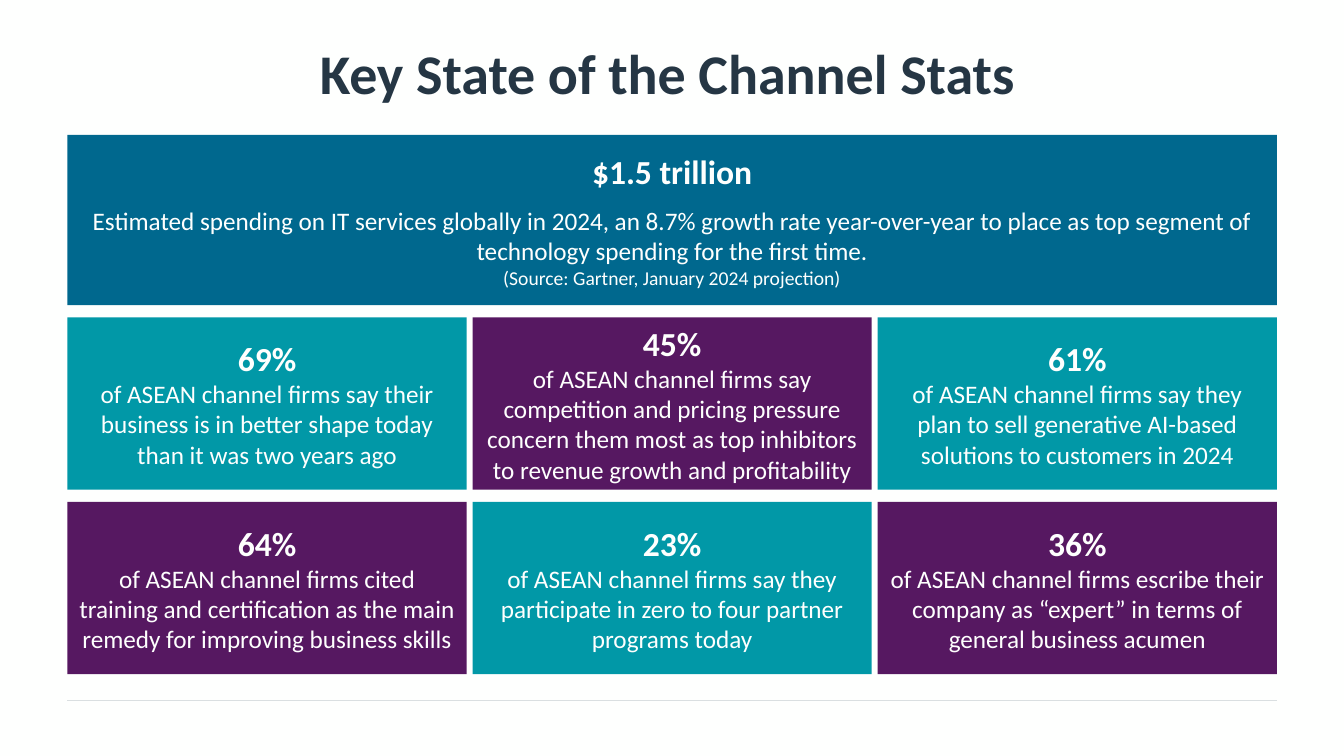
from pptx import Presentation
from pptx import util as u
from pptx.dml.color import RGBColor
from pptx.enum import shapes, text
from pptx.oxml.ns import qn
from lxml import etree

HUES = {"paper": "FEFFFE", "ink": "253644", "rule": "DADFE1",
        "blue": "00688E", "teal": "0198A7", "plum": "561861"}
LEFT, WIDE = 1.7, 30.48
COLS, GAP = 3, 0.15
TOP, HIGH, STEP = 8.0, 4.34, 4.65

STATS = [
    ("69%", "of ASEAN channel firms say their business is in better shape "
            "today than it was two years ago"),
    ("45%", "of ASEAN channel firms say competition and pricing pressure "
            "concern them most as top inhibitors to revenue growth and profitability"),
    ("61%", "of ASEAN channel firms say they plan to sell generative AI-based "
            "solutions to customers in 2024"),
    ("64%", "of ASEAN channel firms cited training and certification as the "
            "main remedy for improving business skills"),
    ("23%", "of ASEAN channel firms say they participate in zero to four "
            "partner programs today"),
    ("36%", "of ASEAN channel firms escribe their company as “expert” in terms "
            "of general business acumen"),
]


def hue(name):
    return RGBColor.from_string(HUES[name])


def write(para, words, size=18, bold=False, color="paper", after=0):
    para.alignment = text.PP_ALIGN.CENTER
    para.space_before, para.space_after = u.Pt(0), u.Pt(after)
    run = para.add_run()
    run.text = words
    font = run.font
    font.name, font.size, font.bold = "Calibri", u.Pt(size), bold
    font.color.rgb = hue(color)


class Board:
    def __init__(self, deck):
        self.slide = deck.slides.add_slide(deck.slide_layouts[5])
        fill = self.slide.background.fill
        fill.solid()
        fill.fore_color.rgb = hue("paper")

    def title(self, words, x, y, w, h):
        box = self.slide.shapes.title
        box.left, box.top, box.width, box.height = map(u.Cm, (x, y, w, h))
        frame = box.text_frame
        frame.auto_size = text.MSO_AUTO_SIZE.NONE
        frame.vertical_anchor = text.MSO_ANCHOR.MIDDLE
        frame.margin_left = 0
        write(frame.paragraphs[0], words, size=40, bold=True, color="ink")

    def rule(self, x, y, w):
        line = self.slide.shapes.add_connector(
            shapes.MSO_CONNECTOR.STRAIGHT, *map(u.Cm, (x, y, x + w, y)))
        line.line.color.rgb = hue("rule")
        line.line.width = u.Pt(0.5)
        etree.SubElement(line._element.spPr, qn("a:effectLst"))

    def card(self, x, y, w, h, color, head, body, note=None, after=0):
        box = self.slide.shapes.add_shape(
            shapes.MSO_SHAPE.RECTANGLE, *map(u.Cm, (x, y, w, h)))
        box.shadow.inherit = False
        box.fill.solid()
        box.fill.fore_color.rgb = hue(color)
        box.line.fill.background()
        frame = box.text_frame
        frame.word_wrap = True
        frame.vertical_anchor = text.MSO_ANCHOR.MIDDLE
        write(frame.paragraphs[0], head, size=24, bold=True, after=after)
        write(frame.add_paragraph(), body)
        if note:
            write(frame.add_paragraph(), note, size=14)


def main():
    deck = Presentation()
    deck.slide_width, deck.slide_height = u.Cm(33.87), u.Cm(19.05)
    board = Board(deck)

    # Footer rule and title
    board.rule(LEFT, 17.65, WIDE)
    board.title("Key State of the Channel Stats", LEFT, 0.23, WIDE, 3.17)

    # Headline banner
    board.card(LEFT, 3.4, WIDE, 4.29, "blue", "$1.5 trillion",
               "Estimated spending on IT services globally in 2024, an 8.7% "
               "growth rate year-over-year to place as top segment of "
               "technology spending for the first time.",
               note="(Source: Gartner, January 2024 projection)", after=10)

    # Grid of stats in alternating colours
    pitch = (WIDE + GAP) / COLS
    for i, (head, body) in enumerate(STATS):
        row, col = divmod(i, COLS)
        board.card(LEFT + col * pitch, TOP + row * STEP, pitch - GAP, HIGH,
                   ("teal", "plum")[i % 2], head, body)

    deck.save("out.pptx")


if __name__ == "__main__":
    main()
